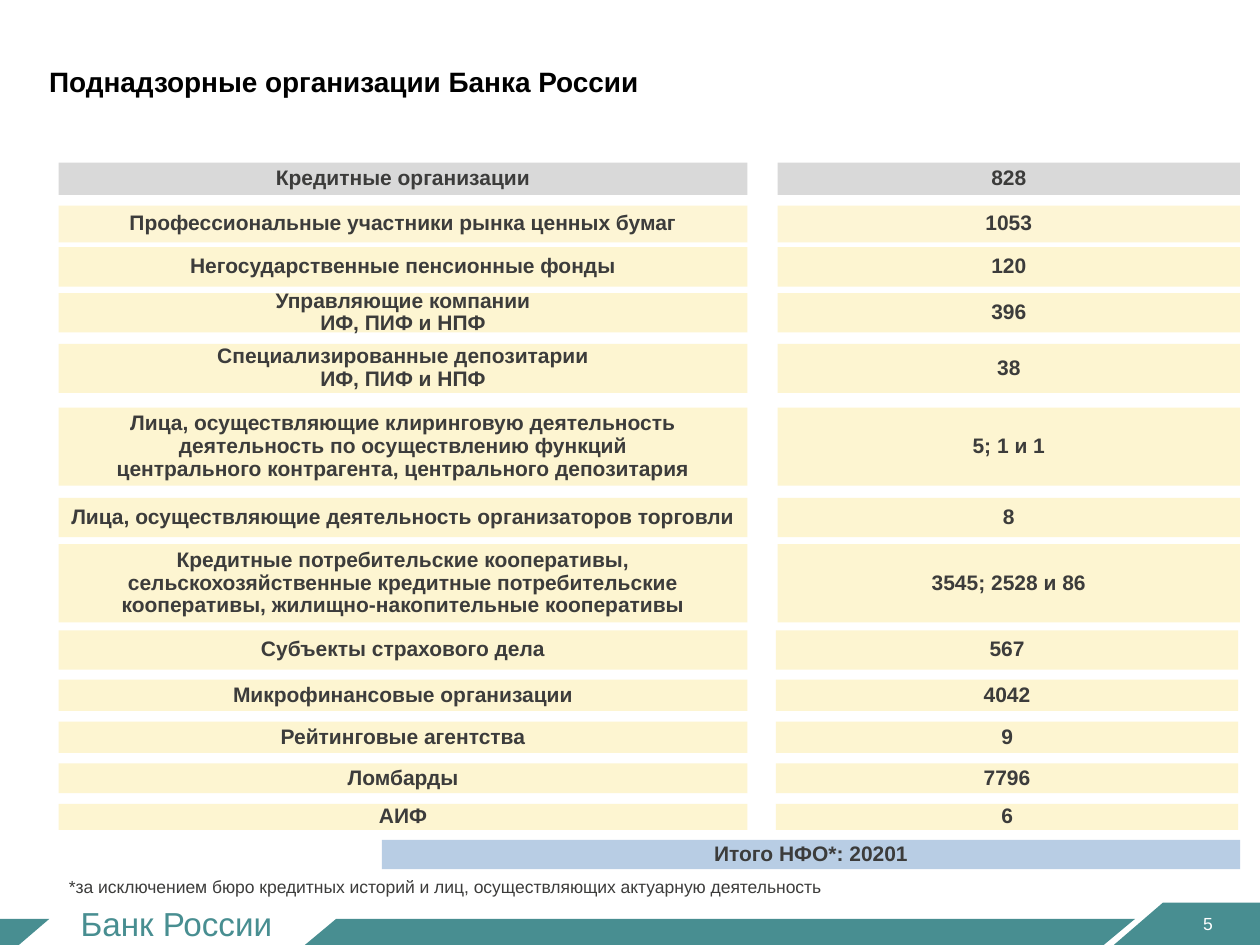
"""Build the slide on organisations supervised by the Bank of Russia."""
from lxml import etree
from pptx import Presentation
from pptx.dml.color import RGBColor
from pptx.enum import shapes, text
from pptx.oxml import ns
from pptx.util import Pt

TEAL, CREAM, GREY, BLUE, INK = "488E91", "FDF5D1", "D9D9D9", "B8CDE4", "3C3C3B"
LEFT, MID, RIGHT = text.PP_ALIGN.LEFT, text.PP_ALIGN.CENTER, text.PP_ALIGN.RIGHT


def paint(sp, color):
    sp.shadow.inherit = False
    sp.fill.solid()
    sp.fill.fore_color.rgb = RGBColor.from_string(color)
    sp.line.fill.background()


def write(sp, lines, size, color, bold=False, align=LEFT, middle=True, wrap=True, inset=0, spacing=1.0):
    tf = sp.text_frame
    tf.word_wrap = wrap
    tf.vertical_anchor = text.MSO_ANCHOR.MIDDLE if middle else text.MSO_ANCHOR.TOP
    tf.margin_left = tf.margin_right = tf.margin_top = tf.margin_bottom = Pt(inset)
    tf.text = lines
    for p in tf.paragraphs:
        p.alignment = align
        p.line_spacing = spacing
        p.font.name = "Arial"
        p.font.size = Pt(size)
        p.font.bold = bold
        p.font.color.rgb = RGBColor.from_string(color)


prs = Presentation()
prs.slide_width, prs.slide_height = Pt(720), Pt(540)
s = prs.slides.add_slide(prs.slide_layouts[6])

footer = [
    [(192.2, 525), (174.2, 540), (630.7, 540), (648.7, 525)],
    [(664.6, 515.8), (720, 515.8), (720, 540), (636.5, 540)],
    [(0, 525), (28.3, 525), (10.8, 540), (0, 540)],
]
for points in footer:
    start, *rest = [(Pt(x), Pt(y)) for x, y in points]
    fb = s.shapes.build_freeform(*start)
    fb.add_line_segments(rest, close=True)
    paint(fb.convert_to_shape(), TEAL)

labels = [
    ((46.1, 516.2, 110.9, 23), "Банк России", dict(size=19, color=TEAL, middle=False, wrap=False)),
    ((28.1, 25.2, 550, 42.5), "Поднадзорные организации Банка России", dict(size=16, color="000000", bold=True)),
    ((652.3, 513.4, 40.7, 28.8), "5", dict(size=10, color="FFFFFF", align=RIGHT)),
    ((39.4, 500.6, 456.5, 16.6),
     "*за исключением бюро кредитных историй и лиц, осуществляющих актуарную деятельность",
     dict(size=10, color=INK, middle=False)),
]
for box, label, style in labels:
    write(s.shapes.add_textbox(*map(Pt, box)), label, **style)

rows = [
    (92.9, 18.5, "Кредитные организации", "828"),
    (117.5, 21, "Профессиональные участники рынка ценных бумаг", "1053"),
    (141.3, 22.5, "Негосударственные пенсионные фонды", "120"),
    (167.5, 22.5, "Управляющие компании\nИФ, ПИФ и НПФ", "396"),
    (196.5, 28, "Специализированные депозитарии\nИФ, ПИФ и НПФ", "38"),
    (232.9, 44.7, "Лица, осуществляющие клиринговую деятельность\nдеятельность по осуществлению функций\n"
     "центрального контрагента, центрального депозитария", "5; 1 и 1"),
    (284.5, 22.5, "Лица, осуществляющие деятельность организаторов торговли", "8"),
    (311, 44.7, "Кредитные потребительские кооперативы,\nсельскохозяйственные кредитные потребительские\n"
     "кооперативы, жилищно-накопительные кооперативы", "3545; 2528 и 86"),
    (360.2, 22.5, "Субъекты страхового дела", "567"),
    (388.4, 17.8, "Микрофинансовые организации", "4042"),
    (412.4, 17.8, "Рейтинговые агентства", "9"),
    (436.2, 17, "Ломбарды", "7796"),
    (459.4, 14.8, "АИФ", "6"),
]
bars = []
for i, (y, h, name, count) in enumerate(rows):
    color = CREAM if i else GREY
    alpha = 90 if i == 1 else 100
    bars.append((33.5, y, 393.6, h, name, color, alpha))
    bars.append((444.4 if i < 8 else 443.4, y, 264.2, h, count, color, alpha))
bars.append((218.2, 480, 490.5, 16.7, "Итого НФО*: 20201", BLUE, 100))

for x, y, w, h, label, color, alpha in bars:
    sp = s.shapes.add_shape(shapes.MSO_SHAPE.RECTANGLE, Pt(x), Pt(y), Pt(w), Pt(h))
    paint(sp, color)
    if alpha < 100:
        clr = sp.fill._xPr.find(".//" + ns.qn("a:srgbClr"))
        etree.SubElement(clr, ns.qn("a:alpha"), val=str(alpha * 1000))
    write(sp, label, 12, INK, bold=True, align=MID, wrap=False, inset=3, spacing=0.9)

prs.save("out.pptx")
